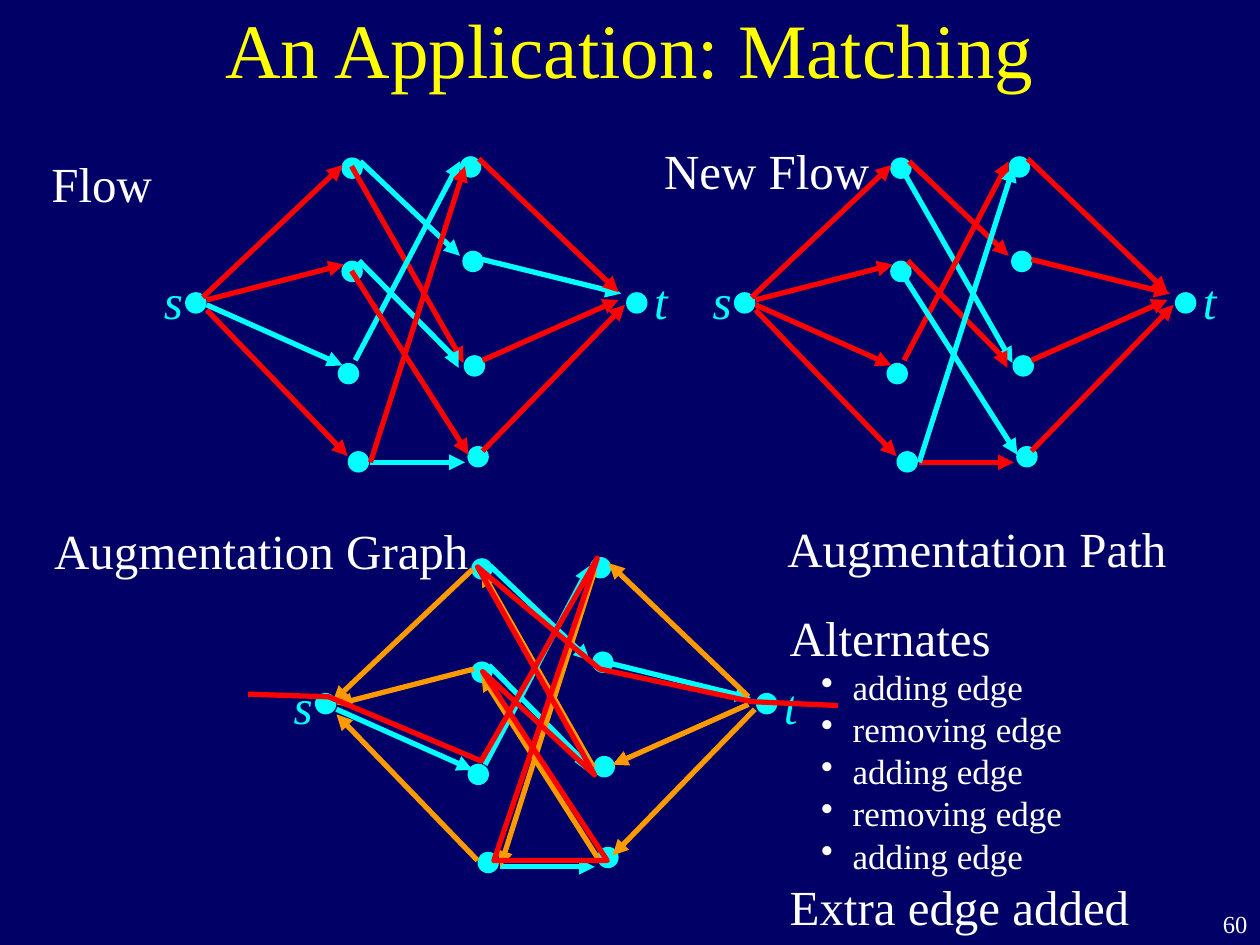
from dataclasses import dataclass

import pptx
import pptx.dml.color
import pptx.enum.shapes
import pptx.enum.text
import pptx.oxml
import pptx.oxml.ns
import pptx.util

Pt = pptx.util.Pt
RGBColor = pptx.dml.color.RGBColor
ALIGN = pptx.enum.text.PP_ALIGN
ANCHOR = pptx.enum.text.MSO_ANCHOR
SHAPE = pptx.enum.shapes.MSO_SHAPE
Point = tuple[float, float]

NAVY = RGBColor(0x00, 0x00, 0x66)
WHITE = RGBColor(0xFF, 0xFF, 0xFF)
YELLOW = RGBColor(0xFF, 0xFF, 0x00)
CYAN = RGBColor(0x00, 0xFF, 0xFF)
RED = RGBColor(0xFF, 0x00, 0x00)
ORANGE = RGBColor(0xFF, 0x99, 0x00)

FONT = "Times New Roman"
NODE_SIZE = 12.24

# Top left corners of the node dots: a is the left column, b the right one.
NODES: dict[str, Point] = {
    "t": (357.8, 167), "s": (105.8, 167),
    "a0": (195.1, 90), "a1": (195.1, 149), "a2": (193, 207.4), "a3": (198.7, 257.8),
    "b0": (262.8, 89.3), "b1": (264.2, 143.3), "b2": (265, 203), "b3": (267.1, 254.9),
}
EDGES: dict[str, list[Point]] = {
    "a0-b2": [(200.9, 95), (265, 207.4)],
    "a1-b2": [(205.2, 149), (262.8, 207.4), (262.1, 210.2)],
    "a2-b0": [(203, 205.9), (262.8, 92.2)],
    "a3-b3": [(211.7, 264.2), (265.7, 264.2)],
    "a0-b1": [(205.9, 92.2), (262.8, 146.2)],
    "a1-b3": [(200.9, 154.8), (267.8, 259.9)],
    "a3-b0": [(211.7, 264.2), (265.7, 95)],
    "s-a3": [(118.1, 177.1), (198.7, 260.6)],
    "s-a2": [(118.1, 174.2), (195.8, 208.8)],
    "s-a1": [(118.1, 171.4), (196.6, 151.2)],
    "s-a0": [(115.9, 169.9), (195.8, 94.3)],
    "b3-t": [(275.8, 257.8), (357.1, 174.2)],
    "b2-t": [(275.8, 205.9), (353.5, 171.4)],
    "b1-t": [(275.8, 148.3), (355, 167.8)],
    "b0-t": [(273.6, 90.7), (353.5, 167)],
}
OLD_FLOW = {"a0-b2", "a1-b3", "a3-b0", "s-a0", "s-a1", "s-a3", "b0-t", "b2-t", "b3-t"}
NEW_FLOW = set(EDGES) - {"a0-b2", "a1-b3", "a3-b0"}

AUGMENTING_PATH: list[Point] = [
    (141.8, 396.7), (187.9, 398.2), (275, 434.9), (341.3, 319), (282.2, 491.8),
    (347, 491.8), (275.8, 383.8), (339.8, 442.8), (272.9, 324), (342.7, 382.3),
    (429.8, 401), (478.8, 403.2),
]


@dataclass
class Network:
    dx: float
    dy: float
    flow: set[str]
    flow_color: RGBColor = RED
    reverse_flow: bool = False
    edge_drop: float = 0  # extra shift of edges and labels below the nodes


@dataclass
class Label:
    text: str
    x: float
    y: float
    w: float
    h: float = 41
    size: float = 28
    color: RGBColor = WHITE
    align: ALIGN = ALIGN.LEFT
    italic: bool = False
    anchor: ANCHOR = ANCHOR.TOP


NETWORKS = [
    Network(0, 0, OLD_FLOW),
    Network(74.2, 229, OLD_FLOW, ORANGE, True, 2.1),
    Network(313.6, 0, NEW_FLOW),
]
LABELS = [
    Label("An Application: Matching", 54, -18, 612, 90, 44, YELLOW, ALIGN.CENTER,
          anchor=ANCHOR.MIDDLE),
    Label("Flow", 22.3, 84.2, 72),
    Label("New Flow", 372.2, 77, 131.8, align=ALIGN.CENTER),
    Label("Augmentation Graph", 23.8, 293.8, 251.3),
    Label("Augmentation Path", 442.8, 293, 231.1),
    Label("60", 684, 516.2, 36, 23.8, 14, align=ALIGN.RIGHT),
]


def style_paragraph(p, size: float, color: RGBColor, italic: bool = False) -> None:
    p.font.name = FONT
    p.font.size = Pt(size)
    p.font.color.rgb = color
    p.font.italic = italic


def draw_label(s, label: Label) -> None:
    tb = s.shapes.add_textbox(Pt(label.x), Pt(label.y), Pt(label.w), Pt(label.h))
    tf = tb.text_frame
    tf.word_wrap = False
    tf.vertical_anchor = label.anchor
    p = tf.paragraphs[0]
    p.text = label.text
    p.alignment = label.align
    style_paragraph(p, label.size, label.color, label.italic)


def add_child(parent, tag: str, **attrs: str) -> None:
    child = pptx.oxml.parse_xml(f"<{tag} {pptx.oxml.ns.nsdecls('a')}/>")
    for name, value in attrs.items():
        child.set(name, value)
    parent.append(child)


def draw_line(s, points: list[Point], color: RGBColor, arrow: str = "") -> None:
    """Draw a line; arrow is "headEnd" (start), "tailEnd" (end) or empty."""
    pts = [(Pt(x), Pt(y)) for x, y in points]
    if len(pts) == 2:
        sp = s.shapes.add_connector(pptx.enum.shapes.MSO_CONNECTOR.STRAIGHT, *pts[0], *pts[1])
    else:
        builder = s.shapes.build_freeform(*pts[0])
        builder.add_line_segments(pts[1:], close=False)
        sp = builder.convert_to_shape()
        sp.fill.background()
    sp.line.color.rgb = color
    sp.line.width = Pt(3)
    spPr = sp.element.spPr
    if arrow:
        add_child(spPr.find(pptx.oxml.ns.qn("a:ln")), f"a:{arrow}", type="triangle")
    add_child(spPr, "a:effectLst")


def draw_network(s, net: Network) -> None:
    for x, y in NODES.values():
        sp = s.shapes.add_shape(SHAPE.OVAL, Pt(x + net.dx), Pt(y + net.dy),
                                Pt(NODE_SIZE), Pt(NODE_SIZE))
        sp.shadow.inherit = False
        sp.fill.solid()
        sp.fill.fore_color.rgb = CYAN
        sp.line.fill.background()
    dy = net.dy + net.edge_drop
    for name, points in EDGES.items():
        in_flow = name in net.flow
        arrow = "headEnd" if in_flow and net.reverse_flow else "tailEnd"
        draw_line(s, [(x + net.dx, y + dy) for x, y in points],
                  net.flow_color if in_flow else CYAN, arrow)
    for text, x, w in (("s", 86.4, 25.2), ("t", 366.5, 22.3)):
        draw_label(s, Label(text, x + net.dx, 151.2 + dy, w, color=CYAN,
                            align=ALIGN.CENTER, italic=True))


def draw_alternates(s) -> None:
    tf = s.shapes.add_textbox(Pt(444.2), Pt(343.4), Pt(208.8), Pt(194.4)).text_frame
    tf.word_wrap = False
    steps = ["adding edge", "removing edge"] * 2 + ["adding edge"]
    for i, text in enumerate(["Alternates", *steps, "Extra edge added"]):
        p = tf.add_paragraph() if i else tf.paragraphs[0]
        p.text = text
        is_step = text in steps
        style_paragraph(p, 20 if is_step else 28, WHITE)
        if is_step:
            p.level = 1
            pPr = p._p.get_or_add_pPr()
            pPr.set("marL", str(Pt(36)))
            pPr.set("indent", str(Pt(-18)))
            bullet = pptx.oxml.parse_xml(
                f'<a:buChar {pptx.oxml.ns.nsdecls("a")} char="•"/>')
            pPr.insert_element_before(bullet, "a:tabLst", "a:defRPr", "a:extLst")


def main() -> None:
    prs = pptx.Presentation()
    prs.slide_width, prs.slide_height = Pt(720), Pt(540)
    s = prs.slides.add_slide(prs.slide_layouts[6])
    s.background.fill.solid()
    s.background.fill.fore_color.rgb = NAVY
    for net in NETWORKS:
        draw_network(s, net)
    draw_line(s, AUGMENTING_PATH, RED)
    for label in LABELS:
        draw_label(s, label)
    draw_alternates(s)
    prs.save("out.pptx")


if __name__ == "__main__":
    main()
